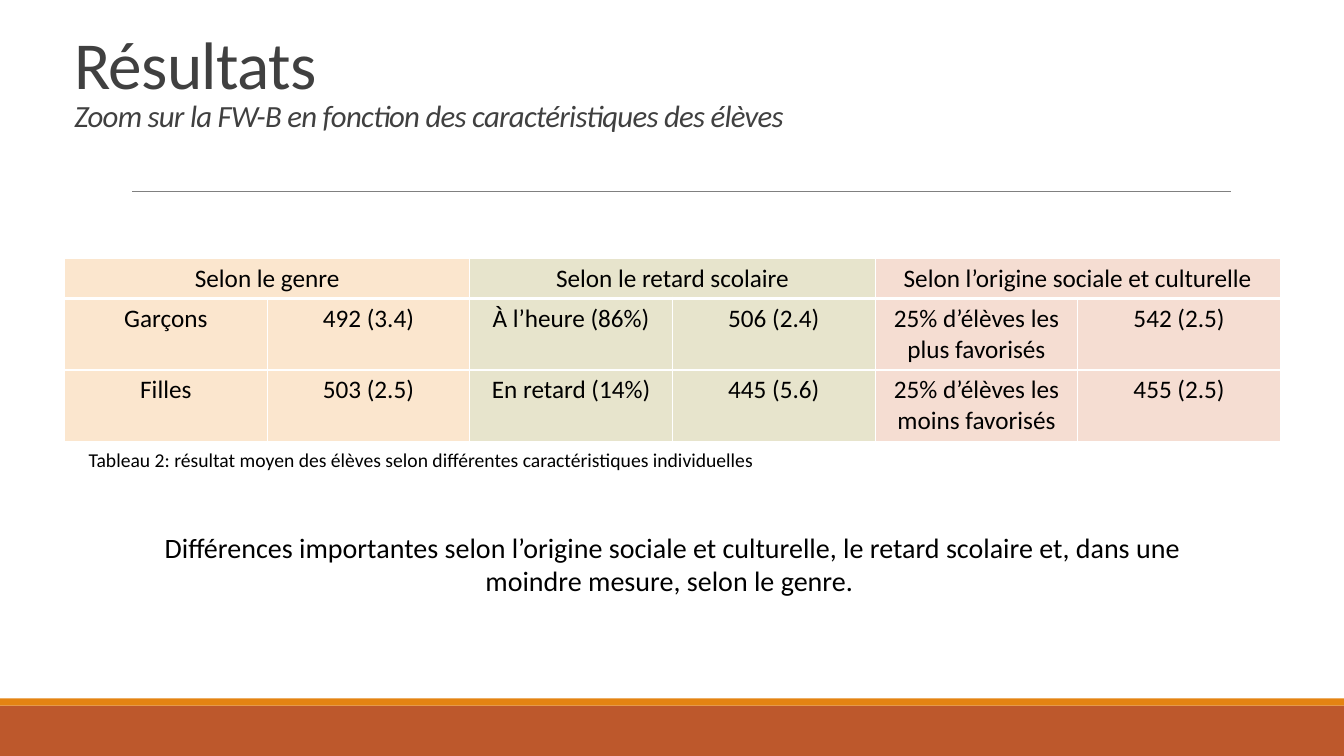
from dataclasses import dataclass

from lxml.etree import SubElement
from pptx import Presentation
from pptx.dml.color import RGBColor
from pptx.enum.shapes import MSO_CONNECTOR, MSO_SHAPE
from pptx.enum.text import MSO_ANCHOR, PP_ALIGN
from pptx.oxml import parse_xml
from pptx.oxml.ns import nsdecls, qn
from pptx.slide import Slide
from pptx.table import _Cell
from pptx.text.text import TextFrame, _Paragraph
from pptx.util import Inches, Pt


@dataclass(frozen=True)
class Theme:
    font: str = "Calibri"
    text: str = "000000"
    heading: str = "404040"
    rule: str = "808080"
    border: str = "FFFFFF"
    footer: str = "BD582C"
    accent: str = "E48312"
    gender: str = "FBE6CE"
    delay: str = "E7E4CC"
    origin: str = "F5DDD2"
    title_size: int = 48
    subtitle_size: int = 22
    conclusion_size: int = 20
    table_size: int = 18
    caption_size: int = 14


@dataclass(frozen=True)
class Band:
    top: float
    height: float
    color: str


@dataclass(frozen=True)
class Criterion:
    heading: str
    color: str
    results: tuple[tuple[str, str], ...]


THEME = Theme()
SLIDE_WIDTH, SLIDE_HEIGHT = 13.33, 7.5
COLUMN_WIDTH = 2.01
ROW_HEIGHTS = (0.4, 0.71, 0.71)

BANDS = (Band(7, 0.5, THEME.footer), Band(6.93, 0.07, THEME.accent))
CRITERIA = (
    Criterion("Selon le genre", THEME.gender,
              (("Garçons", "492 (3.4)"), ("Filles", "503 (2.5)"))),
    Criterion("Selon le retard scolaire", THEME.delay,
              (("À l’heure (86%)", "506 (2.4)"), ("En retard (14%)", "445 (5.6)"))),
    Criterion("Selon l’origine sociale et culturelle", THEME.origin,
              (("25% d’élèves les plus favorisés", "542 (2.5)"),
               ("25% d’élèves les moins favorisés", "455 (2.5)"))),
)


def write(paragraph: _Paragraph, text: str, *, size: int, color: str = THEME.text,
          italic: bool = False, align: PP_ALIGN = PP_ALIGN.LEFT,
          tracking: float = 0) -> None:
    paragraph.alignment = align
    run = paragraph.add_run()
    run.text = text
    run.font.name = THEME.font
    run.font.size = Pt(size)
    run.font.italic = italic
    run.font.color.rgb = RGBColor.from_string(color)
    if tracking:
        run.font._element.set("spc", str(int(tracking * 100)))


def add_text_frame(slide: Slide, left: float, top: float, width: float,
                   height: float) -> TextFrame:
    box = slide.shapes.add_textbox(Inches(left), Inches(top), Inches(width), Inches(height))
    box.text_frame.word_wrap = True
    return box.text_frame


def add_band(slide: Slide, band: Band) -> None:
    stripe = slide.shapes.add_shape(MSO_SHAPE.RECTANGLE, 0, Inches(band.top),
                                    Inches(SLIDE_WIDTH), Inches(band.height))
    stripe.shadow.inherit = False
    stripe.fill.solid()
    stripe.fill.fore_color.rgb = RGBColor.from_string(band.color)
    stripe.line.fill.background()


def add_rule(slide: Slide) -> None:
    rule = slide.shapes.add_connector(MSO_CONNECTOR.STRAIGHT, Inches(1.31), Inches(1.9),
                                      Inches(12.21), Inches(1.9))
    rule.line.color.rgb = RGBColor.from_string(THEME.rule)
    rule.line.width = Pt(0.5)
    SubElement(rule._element.spPr, qn("a:effectLst"))


def add_title(slide: Slide) -> None:
    frame = add_text_frame(slide, 0.64, 0.05, 11.94, 1.33)
    frame.vertical_anchor = MSO_ANCHOR.BOTTOM
    title = frame.paragraphs[0]
    title.line_spacing = 0.85
    write(title, "Résultats", size=THEME.title_size, color=THEME.heading, tracking=-0.5)
    title.add_line_break()
    write(title, "Zoom sur la FW-B en fonction des caractéristiques des élèves",
          size=THEME.subtitle_size, color=THEME.heading, italic=True, tracking=-0.5)


def style_cell(cell: _Cell, color: str, bottom_width: int) -> None:
    cell.fill.solid()
    cell.fill.fore_color.rgb = RGBColor.from_string(color)
    properties = cell._tc.get_or_add_tcPr()
    widths = {"lnL": 1, "lnR": 1, "lnT": 1, "lnB": bottom_width}
    for position, (side, width) in enumerate(widths.items()):
        properties.insert(position, parse_xml(
            f'<a:{side} {nsdecls("a")} w="{Pt(width)}"><a:solidFill>'
            f'<a:srgbClr val="{THEME.border}"/></a:solidFill></a:{side}>'))


def fill_cell(cell: _Cell, text: str) -> None:
    write(cell.text_frame.paragraphs[0], text, size=THEME.table_size, align=PP_ALIGN.CENTER)


def add_results_table(slide: Slide) -> None:
    column_count = 2 * len(CRITERIA)
    results = slide.shapes.add_table(
        len(ROW_HEIGHTS), column_count, Inches(0.64), Inches(2.56),
        Inches(COLUMN_WIDTH * column_count), Inches(sum(ROW_HEIGHTS))).table
    results.first_row = False
    results.horz_banding = False
    for column in results.columns:
        column.width = Inches(COLUMN_WIDTH)
    for row, height in zip(results.rows, ROW_HEIGHTS):
        row.height = Inches(height)
    for index, criterion in enumerate(CRITERIA):
        first = 2 * index
        for row in range(len(ROW_HEIGHTS)):
            for column in (first, first + 1):
                style_cell(results.cell(row, column), criterion.color, 1 if row else 3)
        heading = results.cell(0, first)
        heading.merge(results.cell(0, first + 1))
        heading.vertical_anchor = MSO_ANCHOR.MIDDLE
        fill_cell(heading, criterion.heading)
        for row, (group, score) in enumerate(criterion.results, start=1):
            fill_cell(results.cell(row, first), group)
            fill_cell(results.cell(row, first + 1), score)


def main() -> None:
    presentation = Presentation()
    presentation.slide_width = Inches(SLIDE_WIDTH)
    presentation.slide_height = Inches(SLIDE_HEIGHT)
    slide = presentation.slides.add_slide(presentation.slide_layouts[6])
    for band in BANDS:
        add_band(slide, band)
    add_rule(slide)
    add_title(slide)
    add_results_table(slide)
    conclusion = add_text_frame(slide, 1.53, 5.21, 10.28, 0.77)
    write(conclusion.paragraphs[0],
          "Différences importantes selon l’origine sociale et culturelle, le retard scolaire "
          "et, dans une moindre mesure, selon le genre. ",
          size=THEME.conclusion_size, align=PP_ALIGN.CENTER)
    caption = add_text_frame(slide, 0.78, 4.39, 12.06, 0.34)
    write(caption.paragraphs[0],
          "Tableau 2: résultat moyen des élèves selon différentes caractéristiques individuelles",
          size=THEME.caption_size)
    presentation.save("out.pptx")


if __name__ == "__main__":
    main()
